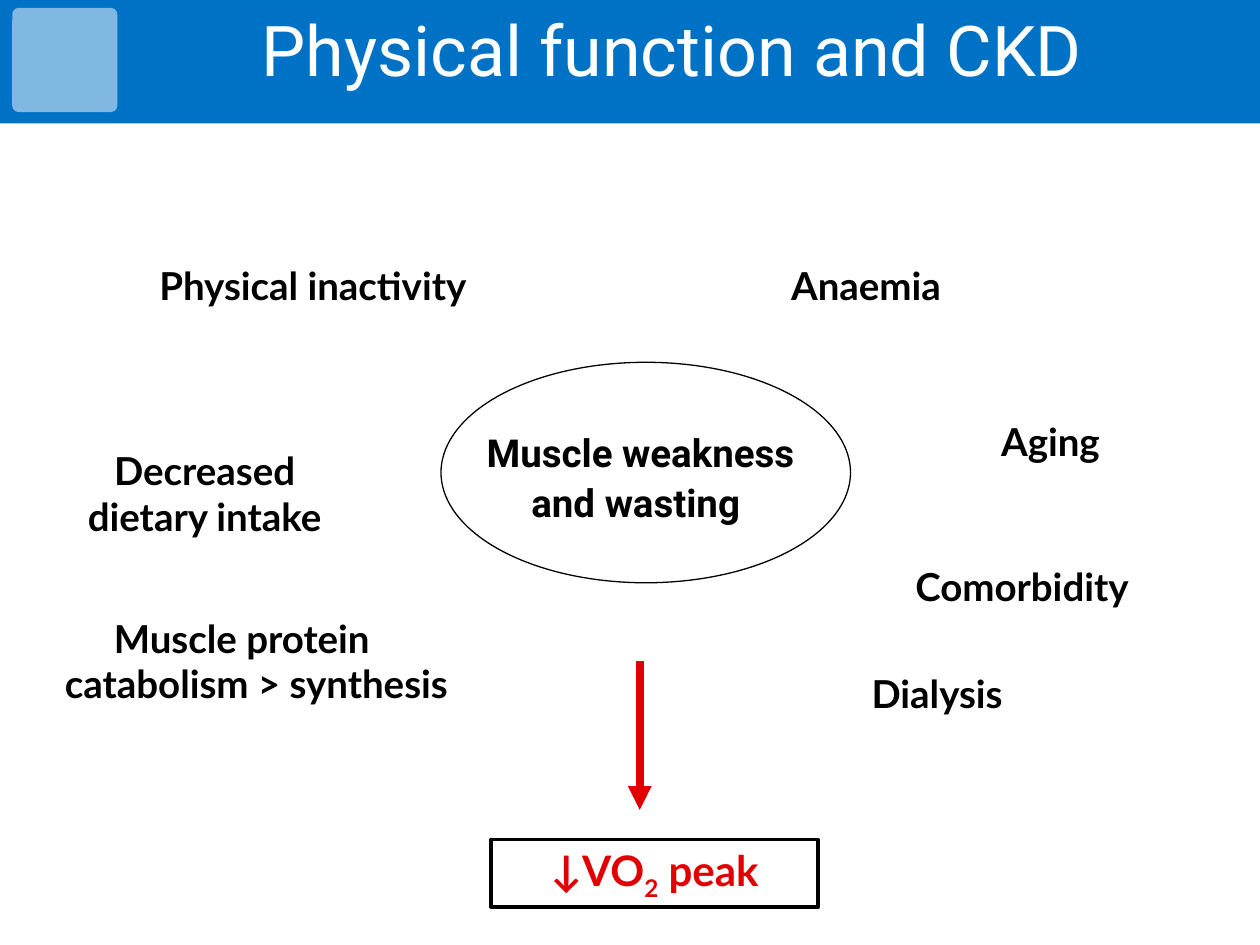
from lxml.etree import SubElement
from pptx import Presentation
from pptx.dml.color import RGBColor
from pptx.enum.shapes import MSO_CONNECTOR as CONN, MSO_SHAPE as SHAPE
from pptx.enum.text import MSO_ANCHOR as ANCHOR, PP_ALIGN as ALIGN
from pptx.oxml.ns import qn
from pptx.util import Pt

BLUE, RED, BLACK, WHITE = "0072C6", "E00000", "000000", "FFFFFF"


def color(value):
    return RGBColor.from_string(value)


def add_shape(s, kind, box, fill=None, line=None, width=0.75, alpha=None):
    sp = s.shapes.add_shape(kind, *map(Pt, box))
    sp.shadow.inherit = False
    if fill:
        sp.fill.solid()
        sp.fill.fore_color.rgb = color(fill)
    else:
        sp.fill.background()
    if alpha is not None:
        clr = sp._element.spPr.find(qn("a:solidFill"))[0]
        SubElement(clr, qn("a:alpha")).set("val", str(alpha * 1000))
    if line:
        sp.line.color.rgb = color(line)
        sp.line.width = Pt(width)
    else:
        sp.line.fill.background()
    return sp


def write_text(sp, paragraphs, size=22, font="Lato", fill=BLACK, bold=True,
               align=ALIGN.LEFT, anchor=ANCHOR.TOP, spacing=None, before=0,
               indents=()):
    tf = sp.text_frame
    tf.word_wrap = True
    tf.vertical_anchor = anchor
    for i, runs in enumerate(paragraphs):
        p = tf.paragraphs[0] if i == 0 else tf.add_paragraph()
        p.alignment = align
        if spacing:
            p.line_spacing = spacing
        p.space_before = Pt(before if i else 0)
        if i < len(indents):
            p._p.get_or_add_pPr().set("marL", str(Pt(indents[i])))
        for text, baseline in runs:
            r = p.add_run()
            r.text = text
            r.font.name, r.font.size, r.font.bold = font, Pt(size), bold
            r.font.color.rgb = color(fill)
            if baseline:
                r._r.get_or_add_rPr().set("baseline", str(baseline * 1000))


def add_text(s, box, *lines, **fmt):
    sp = s.shapes.add_textbox(*map(Pt, box))
    write_text(sp, [[(line, 0)] for line in lines], **fmt)


def add_header(s, box):
    x, y, w, h = box
    add_shape(s, SHAPE.RECTANGLE, box, fill=BLUE)
    badge = add_shape(s, SHAPE.ROUNDED_RECTANGLE, (x + 7, y + 4.5, 60, 59.5),
                      fill=WHITE, alpha=50)
    badge.adjustments[0] = 0.06
    add_text(s, (x + 78, y, 612, 55), "Physical function and CKD", size=40,
             font="Roboto", fill=WHITE, bold=False, align=ALIGN.CENTER)


def add_center(s, box):
    x, y, w, h = box
    add_shape(s, SHAPE.OVAL, box, line=BLACK)
    add_text(s, (x + 6, y + 27.3, 216, 74), "Muscle weakness", "and wasting ",
             font="Roboto", align=ALIGN.CENTER, anchor=ANCHOR.MIDDLE, spacing=1.1)


def add_left_causes(s, box):
    x, y, w, h = box
    add_text(s, (x + 54, y, 252, 34), "Physical inactivity")
    add_text(s, (x, y + 106, 174, 60), "Decreased dietary intake",
             align=ALIGN.CENTER)
    add_text(s, (x, y + 206.8, w, 57), "Muscle protein",
             "catabolism > synthesis", spacing=0.8, before=4.6, indents=(28,))


def add_right_causes(s, box):
    x, y, w, h = box
    for text, dx, dy in (("Anaemia", 0, 0), ("Aging", 120, 89.5),
                         ("Comorbidity", 71, 172), ("Dialysis", 46, 233.5)):
        add_text(s, (x + dx, y + dy, 150, 34), text)


def add_outcome(s, box):
    x, y, w, h = box
    ends = (x + 85, y - 102, x + 85, y - 17)
    arrow = s.shapes.add_connector(CONN.STRAIGHT, *map(Pt, ends))
    arrow.line.color.rgb = color(RED)
    arrow.line.width = Pt(4.5)
    props = arrow._element.spPr
    SubElement(props.find(qn("a:ln")), qn("a:tailEnd")).set("type", "triangle")
    SubElement(props, qn("a:effectLst"))
    sp = add_shape(s, SHAPE.RECTANGLE, box, line=BLACK, width=2)
    write_text(sp, [[("↓VO", 0), ("2", -25), (" peak", 0)]], size=24, fill=RED,
               align=ALIGN.CENTER, anchor=ANCHOR.MIDDLE)


def main():
    prs = Presentation()
    prs.slide_width, prs.slide_height = Pt(720), Pt(540)
    s = prs.slides.add_slide(prs.slide_layouts[6])
    add_header(s, (0, 0, 720, 70.5))
    add_center(s, (252, 207, 234, 126))
    add_left_causes(s, (30, 146, 270, 264))
    add_right_causes(s, (445, 146, 270, 268))
    add_outcome(s, (280.6, 479.8, 187, 38.5))
    prs.save("out.pptx")


if __name__ == "__main__":
    main()
